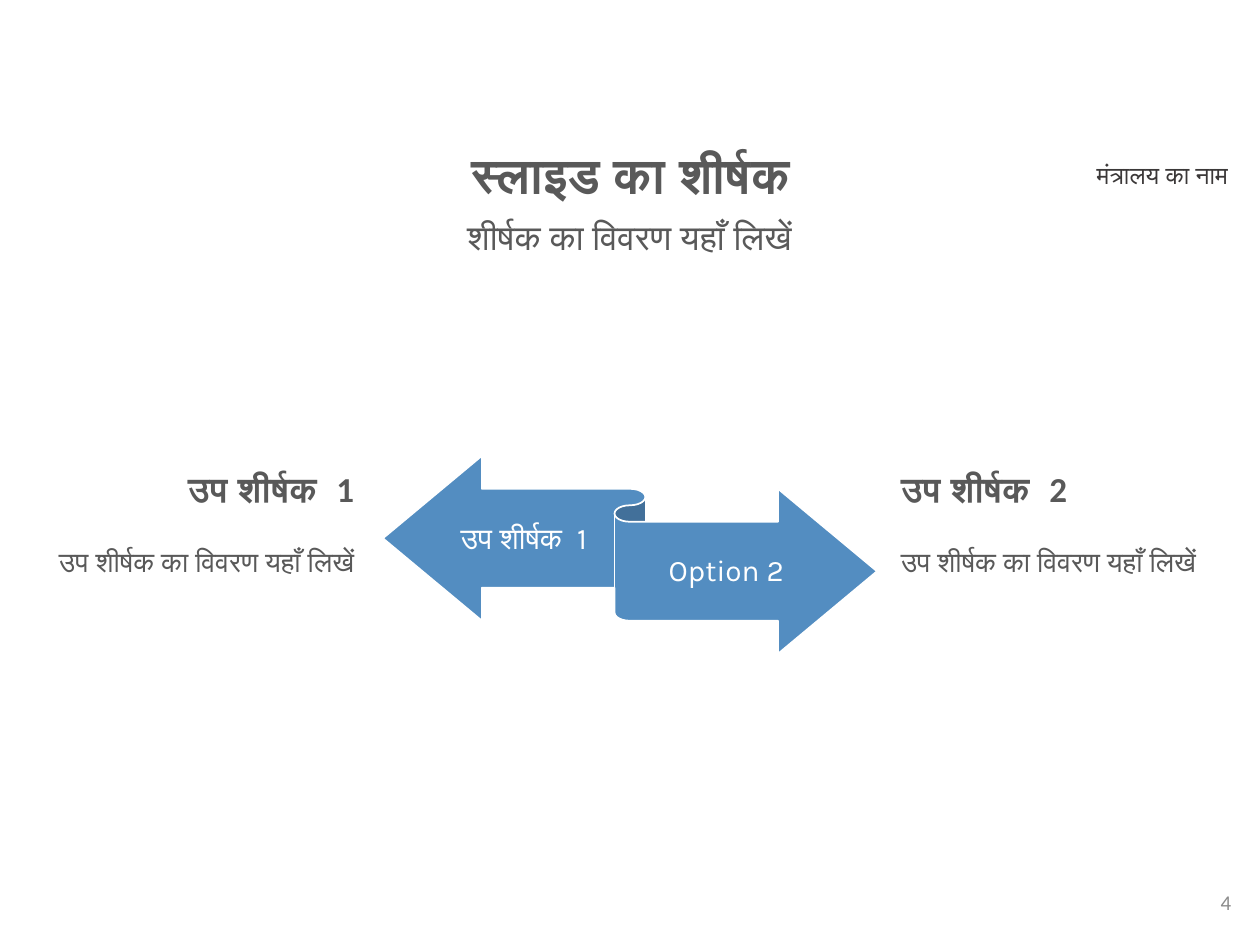
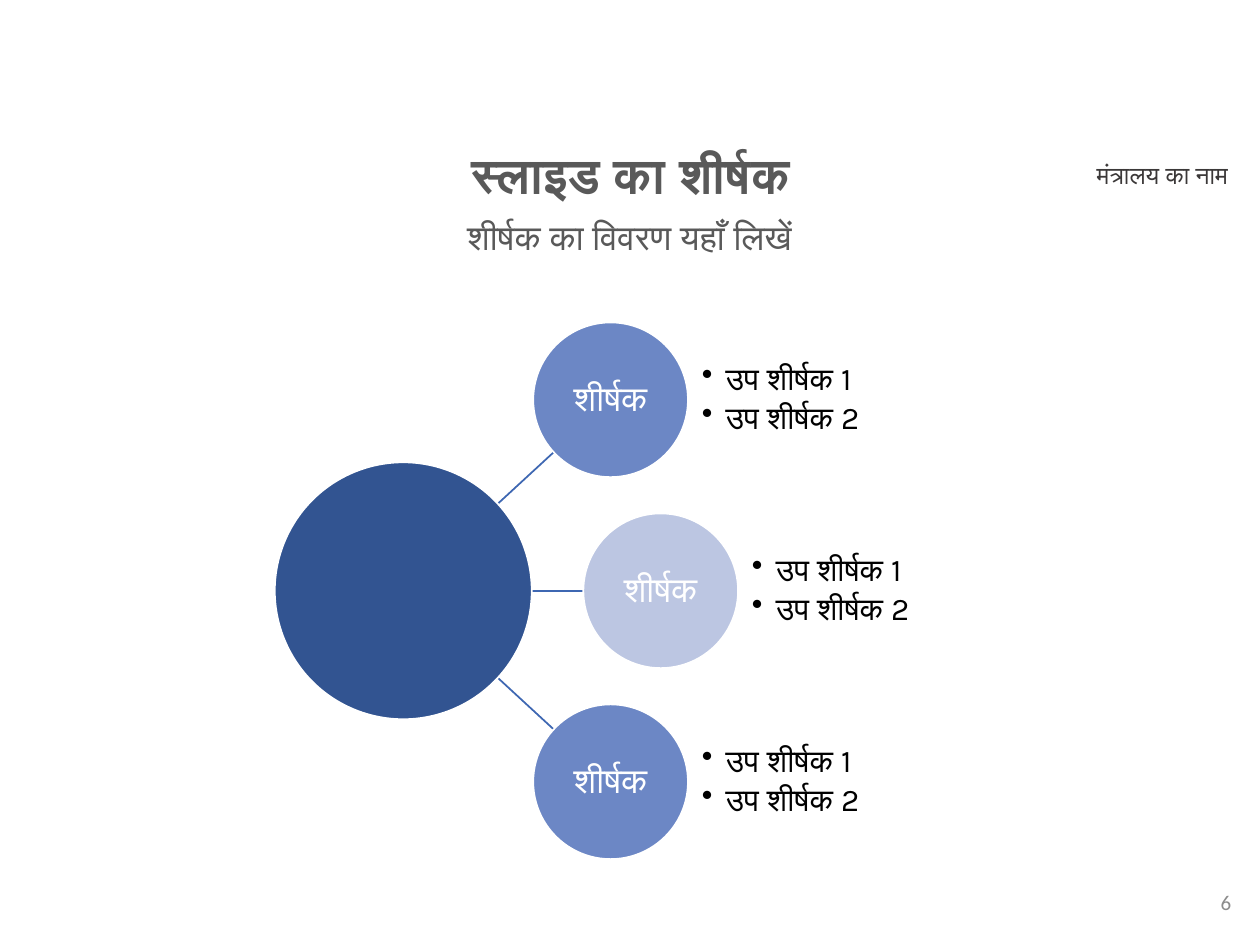
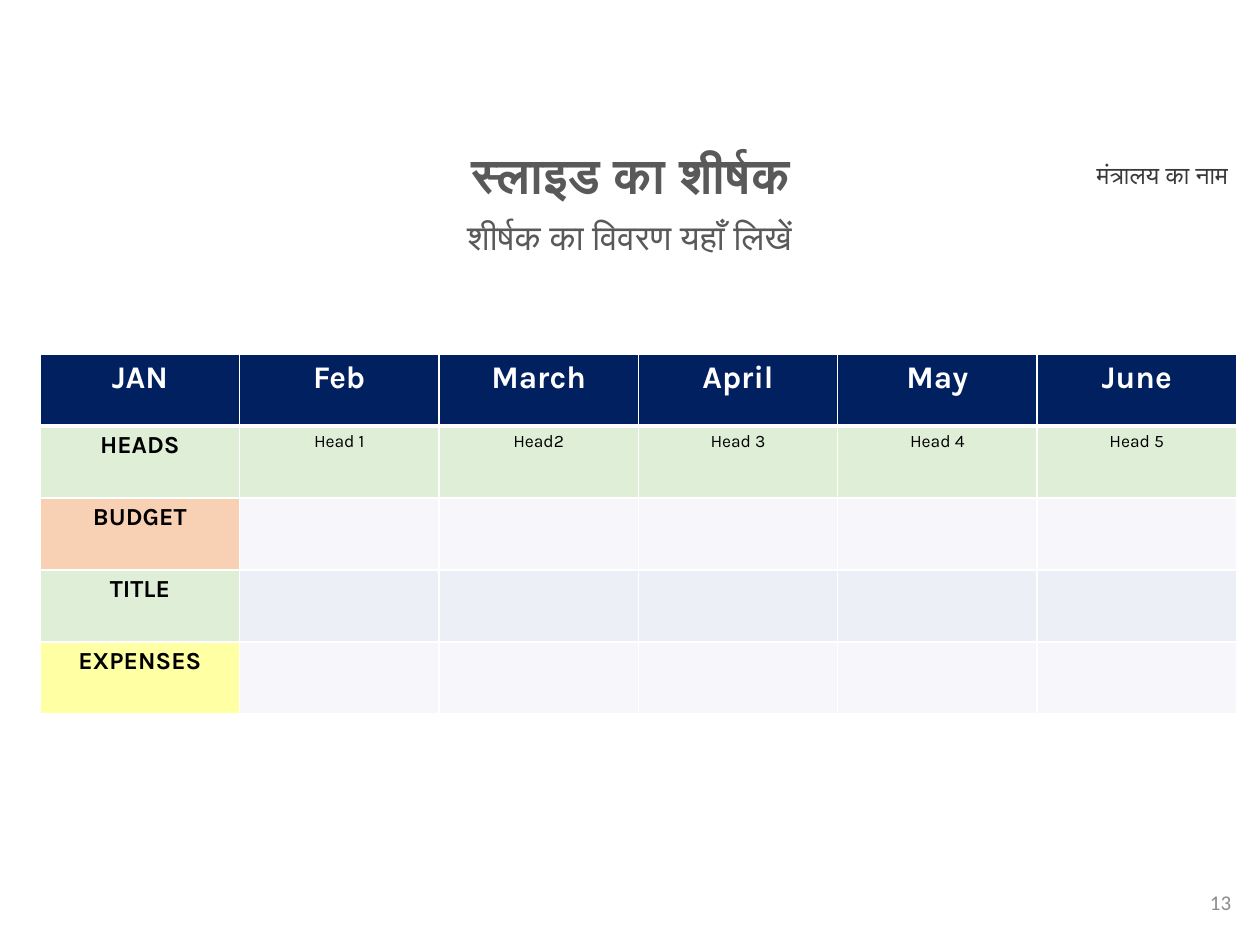
import math

from lxml import etree
from pptx import Presentation, util as u
from pptx.dml.color import RGBColor
from pptx.enum import shapes, text
from pptx.oxml.ns import qn

TITLE = "स्लाइड का शीर्षक"
SUBTITLE = "शीर्षक का विवरण यहाँ लिखें"
MINISTRY = "मंत्रालय का नाम"

LEFT, CENTER, RIGHT = text.PP_ALIGN.LEFT, text.PP_ALIGN.CENTER, text.PP_ALIGN.RIGHT
MIDDLE = text.MSO_ANCHOR.MIDDLE
WHITE, BLACK, GREY = "FFFFFF", "000000", "595959"

# Text styles: font attributes, colour and paragraph settings
STYLES = {
    "title": dict(size=28, name="Calibri", bold=True, color=GREY, align=CENTER, spacing=0.9),
    "subtitle": dict(size=20, name="Calibri", color=GREY, align=CENTER, spacing=0.9),
    "ministry": dict(size=14, name="Calibri", color="3B3838", align=CENTER),
    "number": dict(size=12, name="Calibri", color="8C8C8C", align=RIGHT),
    "option head": dict(size=20, name="Calibri", bold=True, color=GREY),
    "option body": dict(size=16, name="Calibri", color=GREY, before=20),
    "arrow": dict(size=17, name="Karla", color=WHITE, align=CENTER, spacing=0.9),
    "node": dict(size=20, name="Karla", color=WHITE, align=CENTER, spacing=0.9),
    "bullet": dict(size=18, name="Karla", color=BLACK, spacing=0.9, after=3, bullet=True),
    "month": dict(size=18, name="Karla", bold=True, color=WHITE, align=CENTER),
    "row name": dict(size=14, name="Karla", bold=True, color=BLACK, align=CENTER),
    "cell": dict(size=10, name="Karla", bold=False, color=BLACK, align=CENTER),
}

# Slide 1: side text (left, alignment) and arrow label (left, top, width)
OPTION_BODY = "उप शीर्षक का विवरण यहाँ लिखें"
OPTIONS = [
    ("उप शीर्षक  1", 0.71, RIGHT, "उप शीर्षक  1", (8.92, 9.91, 3.28)),
    ("उप शीर्षक  2", 17.91, LEFT, "Option 2", (12.7, 10.54, 3.89)),
]

# Slide 2: hub and its nodes (centre x, offset from the hub's centre, fill)
HUB = (8.13, 11.91)
HUB_R, NODE_R, SPOKE_X = 2.59, 1.56, 9.96
NODES = [(12.31, -3.85, "6C87C5"), (13.32, 0, "BCC6E2"), (12.31, 3.85, "6C87C5")]
NODE_LABEL = "शीर्षक"
NODE_BULLETS = ["उप शीर्षक 1", "उप शीर्षक 2"]

# Slide 3: rows as (fill of first cell, fill of the others, texts)
GREEN, PALE, BAND = "A9D18E", "E9EBF5", "CFD5EA"
BUDGET = [
    ("002060", "002060", ["JAN", "Feb", "March", "April", "May", "June"]),
    (GREEN, GREEN, ["HEADS", "Head 1", "Head2", "Head 3", "Head 4", "Head 5"]),
    ("ED7D31", PALE, ["BUDGET"]),
    (GREEN, BAND, ["TITLE"]),
    ("FFFF00", PALE, ["EXPENSES"]),
]
COL_W, ROW_H = 4.02, 1.45


def rgb(color):
    return RGBColor.from_string(color)


def cm(*lengths):
    return [u.Cm(n) for n in lengths]


def add_bullet(p):
    pPr = p._p.get_or_add_pPr()
    pPr.set("marL", str(u.Cm(0.48)))
    pPr.set("indent", str(-u.Cm(0.48)))
    etree.SubElement(pPr, qn("a:buChar"), char="•")


def write(tf, paragraphs, align=None, anchor=None, margins=None):
    """Fill a text frame with (text, style name) pairs; margins are (sides, ends) in cm."""
    tf.word_wrap = True
    if anchor is not None:
        tf.vertical_anchor = anchor
    if margins:
        tf.margin_left = tf.margin_right = u.Cm(margins[0])
        tf.margin_top = tf.margin_bottom = u.Cm(margins[1])
    for i, (words, style) in enumerate(paragraphs):
        fmt = STYLES[style]
        p = tf.add_paragraph() if i else tf.paragraphs[0]
        if fmt.get("bullet"):
            add_bullet(p)
        p.alignment = fmt.get("align", align)
        p.line_spacing = fmt.get("spacing")
        if "before" in fmt:
            p.space_before = u.Pt(fmt["before"])
        if "after" in fmt:
            p.space_after = u.Pt(fmt["after"])
        r = p.add_run()
        r.text = words
        for key in ("name", "bold"):
            setattr(r.font, key, fmt.get(key))
        r.font.size = u.Pt(fmt["size"])
        r.font.color.rgb = rgb(fmt["color"])


def add_text(s, box, paragraphs, **options):
    write(s.shapes.add_textbox(*cm(*box)).text_frame, paragraphs, **options)


def add_shape(s, kind, box, fill):
    sp = s.shapes.add_shape(kind, *cm(*box))
    sp.shadow.inherit = False
    sp.fill.solid()
    sp.fill.fore_color.rgb = rgb(fill)
    sp.line.color.rgb = rgb(WHITE)
    sp.line.width = u.Pt(1)
    return sp


def add_circle(s, x, y, radius, fill):
    box = (x - radius, y - radius, 2 * radius, 2 * radius)
    return add_shape(s, shapes.MSO_SHAPE.OVAL, box, fill)


def add_line(s, x1, y1, x2, y2, color):
    line = s.shapes.add_connector(shapes.MSO_CONNECTOR.STRAIGHT, *cm(x1, y1, x2, y2))
    line.line.color.rgb = rgb(color)
    line.line.width = u.Pt(1)
    etree.SubElement(line._element.spPr, qn("a:effectLst"))


def add_slide(prs, number):
    """Add a slide with the shared title, subtitle, ministry name and number."""
    s = prs.slides.add_slide(prs.slide_layouts[5])
    title = s.shapes.title
    title.left, title.top, title.width, title.height = cm(4.72, 2.92, 15.98, 1.19)
    write(title.text_frame, [(TITLE, "title")], anchor=text.MSO_ANCHOR.TOP)
    title.text_frame.auto_size = text.MSO_AUTO_SIZE.NONE
    add_text(s, (3.71, 4.32, 17.96, 1.6), [(SUBTITLE, "subtitle")])
    add_text(s, (21.36, 3.1, 4.14, 0.86), [(MINISTRY, "ministry")])
    add_text(s, (19.35, 17.68, 5.72, 1.02), [(number, "number")], anchor=MIDDLE)
    return s


def format_cell(cell, fill, alpha, top, bottom):
    """Set margins, white borders (top and bottom widths in points) and fill."""
    cell.margin_left = cell.margin_right = u.Cm(0.18)
    cell.margin_top = cell.margin_bottom = u.Cm(0.1)
    tcPr = cell._tc.get_or_add_tcPr()
    for side, width in (("L", 1), ("R", 1), ("T", top), ("B", bottom)):
        ln = etree.SubElement(tcPr, qn("a:ln" + side), w=str(u.Pt(width)))
        solid = etree.SubElement(ln, qn("a:solidFill"))
        etree.SubElement(solid, qn("a:srgbClr"), val=WHITE)
    cell.fill.solid()
    cell.fill.fore_color.rgb = rgb(fill)
    if alpha < 100:
        clr = tcPr.find(qn("a:solidFill")).find(qn("a:srgbClr"))
        etree.SubElement(clr, qn("a:alpha"), val=str(alpha * 1000))


def build_options(prs):
    s = add_slide(prs, "4")
    add_shape(s, shapes.MSO_SHAPE.LEFT_RIGHT_RIBBON, (7.72, 9.19, 9.96, 3.99), "538DC1")
    for head, left, align, label, (x, y, width) in OPTIONS:
        add_text(s, (x, y, width, 1.96), [(label, "arrow")], anchor=MIDDLE, margins=(0, 0.18))
        add_text(s, (left, 9.3, 6.68, 3.18),
                 [(head, "option head"), (OPTION_BODY, "option body")], align=align)


def build_hub(prs):
    s = add_slide(prs, "6")
    hub_x, hub_y = HUB
    for x, dy, _ in NODES:
        dx = x - hub_x
        reach = 1 - NODE_R / math.hypot(dx, dy)
        start = (SPOKE_X - hub_x) / dx
        add_line(s, SPOKE_X, hub_y + start * dy,
                 hub_x + reach * dx, hub_y + reach * dy, "3E67B2")
    add_circle(s, hub_x, hub_y, HUB_R, "325491")
    for x, dy, fill in NODES:
        y = hub_y + dy
        node = add_circle(s, x, y, NODE_R, fill)
        write(node.text_frame, [(NODE_LABEL, "node")], anchor=MIDDLE, margins=(0.03, 0.03))
        add_text(s, (x + NODE_R + 0.28, y - NODE_R, 4.67, 2 * NODE_R),
                 [(b, "bullet") for b in NODE_BULLETS], anchor=MIDDLE, margins=(0, 0))


def build_budget(prs):
    s = add_slide(prs, "13")
    rows, cols = len(BUDGET), len(BUDGET[0][2])
    table = s.shapes.add_table(rows, cols, *cm(0.81, 7.14, cols * COL_W, rows * ROW_H)).table
    for col in table.columns:
        col.width = u.Cm(COL_W)
    for i, (first_fill, fill, words) in enumerate(BUDGET):
        table.rows[i].height = u.Cm(ROW_H)
        for j in range(cols):
            cell = table.cell(i, j)
            format_cell(cell, fill if j else first_fill, 36 if i else 100,
                        top=3 if i == 1 else 1, bottom=1 if i else 3)
            if j < len(words):
                style = "month" if i == 0 else "cell" if j else "row name"
                write(cell.text_frame, [(words[j], style)])


def main():
    prs = Presentation()
    prs.slide_width, prs.slide_height = cm(25.4, 19.05)
    build_options(prs)
    build_hub(prs)
    build_budget(prs)
    prs.save("out.pptx")


if __name__ == "__main__":
    main()
